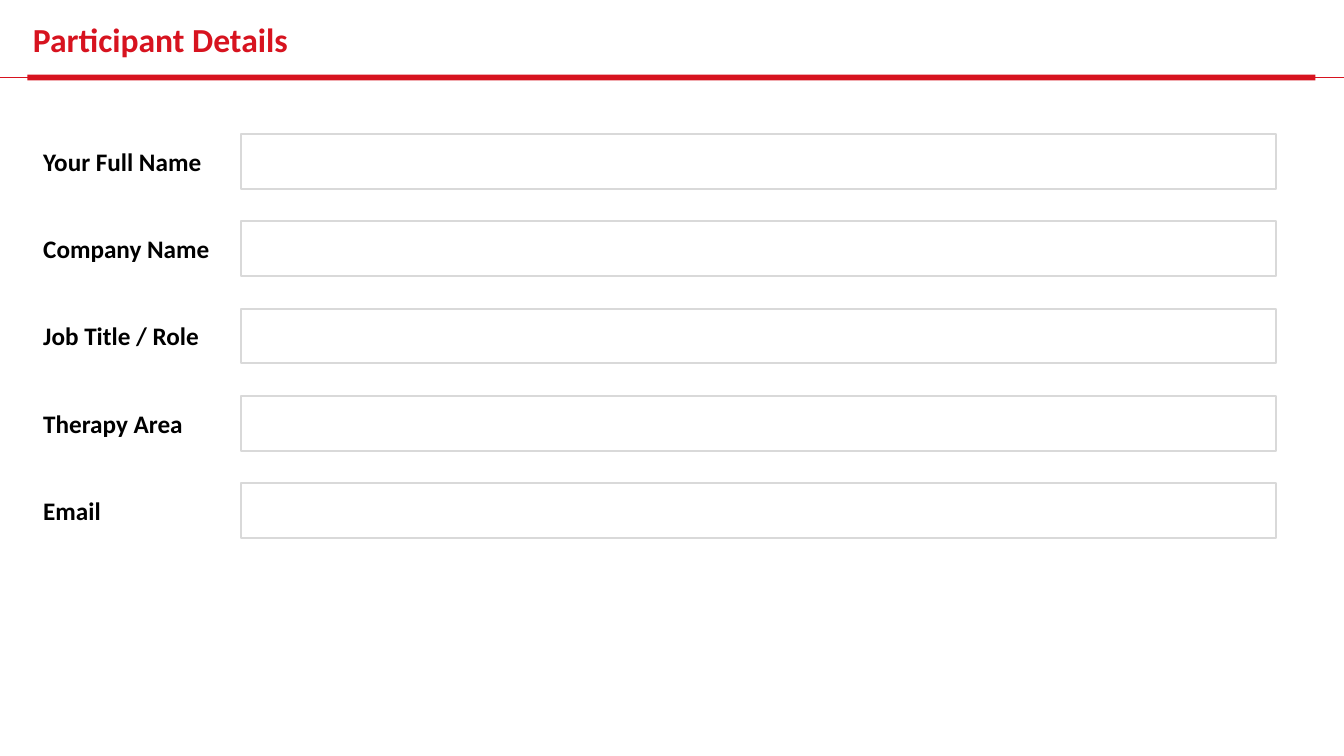
from pptx import Presentation
from pptx.dml.color import RGBColor
from pptx.enum.shapes import MSO_CONNECTOR, MSO_SHAPE
from pptx.enum.text import MSO_ANCHOR, MSO_AUTO_SIZE
from pptx.oxml.ns import qn
from pptx.util import Cm, Pt

RED = RGBColor(0xD7, 0x13, 0x1F)
BLACK = RGBColor(0x00, 0x00, 0x00)
LIGHT_GREY = RGBColor(0xD9, 0xD9, 0xD9)

SLIDE_W, SLIDE_H = Cm(33.87), Cm(19.05)
FIELDS = ["Your Full Name", "Company Name", "Job Title / Role",
          "Therapy Area", "Email"]
FIRST_ROW, ROW_PITCH = Cm(3.38), Cm(2.2)


def add_bold_run(p, text, size, color):
    r = p.add_run()
    r.text = text
    r.font.name = "Calibri"
    r.font.size = Pt(size)
    r.font.bold = True
    r.font.color.rgb = color


def add_title(slide, text):
    box = slide.shapes.add_textbox(Cm(0.58), Cm(0.25), Cm(29.21), Cm(1.6))
    tf = box.text_frame
    tf.word_wrap = True
    tf.vertical_anchor = MSO_ANCHOR.MIDDLE
    p = tf.paragraphs[0]
    p.line_spacing = 0.9
    add_bold_run(p, text, 24, RED)


def add_title_rule(slide):
    """Thin line across the slide with a thicker bar over it."""
    group = slide.shapes.add_group_shape()
    y = Cm(1.96)
    line = group.shapes.add_connector(MSO_CONNECTOR.STRAIGHT, 0, y, SLIDE_W, y)
    line.line.color.rgb = RED
    line.line.width = Pt(1)
    sp_pr = line._element.spPr
    sp_pr.append(sp_pr.makeelement(qn("a:effectLst"), {}))

    bar = group.shapes.add_shape(MSO_SHAPE.RECTANGLE, Cm(0.69), Cm(1.88),
                                 Cm(32.46), Cm(0.15))
    bar.shadow.inherit = False
    bar.fill.solid()
    bar.fill.fore_color.rgb = RED
    bar.line.fill.background()


def add_label(slide, text, top):
    box = slide.shapes.add_textbox(Cm(1.09), top, Cm(4.98), Cm(0.77))
    tf = box.text_frame
    tf.word_wrap = True
    tf.auto_size = MSO_AUTO_SIZE.SHAPE_TO_FIT_TEXT
    tf.margin_left = tf.margin_top = tf.margin_right = tf.margin_bottom = 0
    add_bold_run(tf.paragraphs[0], text, 18, BLACK)


def add_entry_box(slide, top):
    sp = slide.shapes.add_shape(MSO_SHAPE.RECTANGLE, Cm(6.07), top,
                                Cm(26.09), Cm(1.38))
    sp.shadow.inherit = False
    sp.fill.background()
    sp.line.color.rgb = LIGHT_GREY
    sp.line.width = Pt(1.5)


def main():
    prs = Presentation()
    prs.slide_width, prs.slide_height = SLIDE_W, SLIDE_H
    slide = prs.slides.add_slide(prs.slide_layouts[6])
    add_title(slide, "Participant Details")
    add_title_rule(slide)
    for i, field in enumerate(FIELDS):
        top = FIRST_ROW + i * ROW_PITCH
        add_label(slide, field, top + Cm(0.3))
        add_entry_box(slide, top)
    prs.save("out.pptx")


if __name__ == "__main__":
    main()
